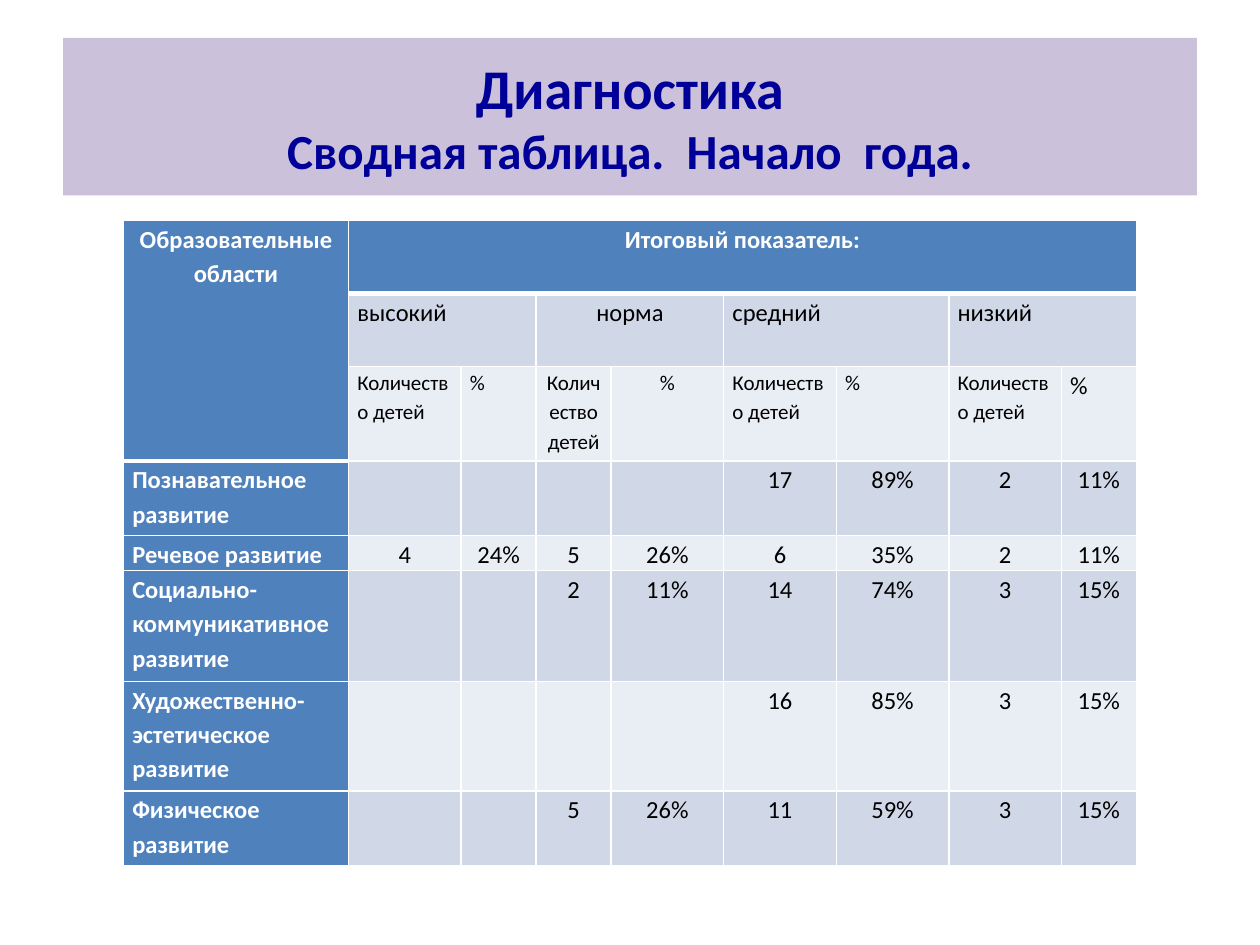
from lxml import etree
from pptx import Presentation
from pptx import util as u
from pptx.dml.color import RGBColor
from pptx.enum import text
from pptx.oxml.ns import qn

WIDTH, HEIGHT = 10, 7.5
FONT = "Calibri"
WHITE, BLACK, NAVY, LILAC, BLUE = "FFFFFF", "000000", "000099", "CCC1DA", "4F81BD"
BANDS = ["E9EDF4", "D0D8E8"]
LEFT, CENTER = text.PP_ALIGN.LEFT, text.PP_ALIGN.CENTER

TABLE_LEFT, TABLE_TOP, TABLE_WIDTH = 0.98, 1.75, 8.04
COLUMN_SHARES = [6, 3, 2, 2, 3, 3, 3, 3, 2]
ROW_HEIGHTS = [0.58, 0.58, 0.75, 0.59, 0.28, 0.88, 0.87, 0.59]
HEADER_ROWS = 3

LEVELS = [("высокий", LEFT), ("норма", CENTER), ("средний", LEFT), ("низкий", LEFT)]
RESULTS = [
    ("Познавательное развитие", "", "", "", "", "17", "89%", "2", "11%"),
    ("Речевое развитие", "4", "24%", "5", "26%", "6", "35%", "2", "11%"),
    ("Социально-коммуникативное развитие", "", "", "2", "11%", "14", "74%", "3", "15%"),
    ("Художественно-эстетическое развитие", "", "", "", "", "16", "85%", "3", "15%"),
    ("Физическое развитие", "", "", "5", "26%", "11", "59%", "3", "15%"),
]


def color(value):
    return RGBColor.from_string(value)


def fill(target, value):
    target.fill.solid()
    target.fill.fore_color.rgb = color(value)


def format_font(font, size, value, bold):
    font.name, font.size, font.bold = FONT, u.Pt(size), bold
    font.color.rgb = color(value)


def add_title(slide, lines):
    """Fill the title with (text, size) lines on a coloured band."""
    title = slide.shapes.title
    title.left, title.top = u.Inches(WIDTH * 0.05), u.Inches(HEIGHT * 0.04)
    title.width, title.height = u.Inches(WIDTH * 0.9), u.Inches(1.25)
    fill(title, LILAC)
    title.text_frame.vertical_anchor = text.MSO_ANCHOR.MIDDLE
    paragraph = title.text_frame.paragraphs[0]
    paragraph.alignment = CENTER
    for index, (line, size) in enumerate(lines):
        if index:
            paragraph.add_line_break()
        run = paragraph.add_run()
        run.text = line
        format_font(run.font, size, NAVY, True)


def set_borders(cell, bottom):
    properties = cell._tc.get_or_add_tcPr()
    for side, width in (("L", 1), ("R", 1), ("T", 1), ("B", bottom)):
        line = etree.SubElement(properties, qn(f"a:ln{side}"), w=str(u.Pt(width)))
        solid = etree.SubElement(line, qn("a:solidFill"))
        etree.SubElement(solid, qn("a:srgbClr"), val=WHITE)


def write_cell(cell, content, size=14, value=BLACK, bold=False, align=CENTER):
    paragraph = cell.text_frame.paragraphs[0]
    paragraph.alignment, paragraph.line_spacing = align, 1.15
    format_font(paragraph.font, size, value, bold)
    if content:
        run = paragraph.add_run()
        run.text = content
        format_font(run.font, size, value, bold)


def add_grid(slide):
    """Add the empty table with its column widths, fills and borders."""
    table = slide.shapes.add_table(
        len(ROW_HEIGHTS), len(COLUMN_SHARES), u.Inches(TABLE_LEFT), u.Inches(TABLE_TOP),
        u.Inches(TABLE_WIDTH), u.Inches(sum(ROW_HEIGHTS))).table
    for column, share in zip(table.columns, COLUMN_SHARES):
        column.width = u.Inches(TABLE_WIDTH * share / sum(COLUMN_SHARES))
    for row_index, height in enumerate(ROW_HEIGHTS):
        table.rows[row_index].height = u.Inches(height)
        for column_index in range(len(COLUMN_SHARES)):
            cell = table.cell(row_index, column_index)
            cell.margin_left = cell.margin_right = u.Inches(0.07)
            cell.margin_top = cell.margin_bottom = 0
            in_corner = column_index == 0 and row_index < HEADER_ROWS
            set_borders(cell, bottom=3 if row_index == 0 or in_corner else 1)
            is_heading = row_index == 0 or column_index == 0
            fill(cell, BLUE if is_heading else BANDS[row_index % 2])
    return table


def write_headers(table):
    table.cell(0, 0).merge(table.cell(HEADER_ROWS - 1, 0))
    table.cell(0, 1).merge(table.cell(0, len(COLUMN_SHARES) - 1))
    write_cell(table.cell(0, 0), "Образовательные области", value=WHITE, bold=True)
    write_cell(table.cell(0, 1), "Итоговый показатель:", value=WHITE, bold=True)
    for index, (level, align) in enumerate(LEVELS):
        count_column = 1 + 2 * index
        percent_column = count_column + 1
        table.cell(1, count_column).merge(table.cell(1, percent_column))
        write_cell(table.cell(1, count_column), level, align=align)
        write_cell(table.cell(2, count_column), "Количество детей", size=12, align=align)
        percent_size = 14 if level == "низкий" else 12
        write_cell(table.cell(2, percent_column), "%", size=percent_size, align=align)


def write_results(table):
    for row_index, (area, *values) in enumerate(RESULTS, HEADER_ROWS):
        write_cell(table.cell(row_index, 0), area, value=WHITE, bold=True, align=LEFT)
        for column_index, content in enumerate(values, 1):
            write_cell(table.cell(row_index, column_index), content)


def main():
    presentation = Presentation()
    presentation.slide_width, presentation.slide_height = u.Inches(WIDTH), u.Inches(HEIGHT)
    slide = presentation.slides.add_slide(presentation.slide_layouts[5])
    add_title(slide, [("Диагностика", 32), ("Сводная таблица.  Начало  года.", 28)])
    table = add_grid(slide)
    write_headers(table)
    write_results(table)
    presentation.save("out.pptx")


if __name__ == "__main__":
    main()
